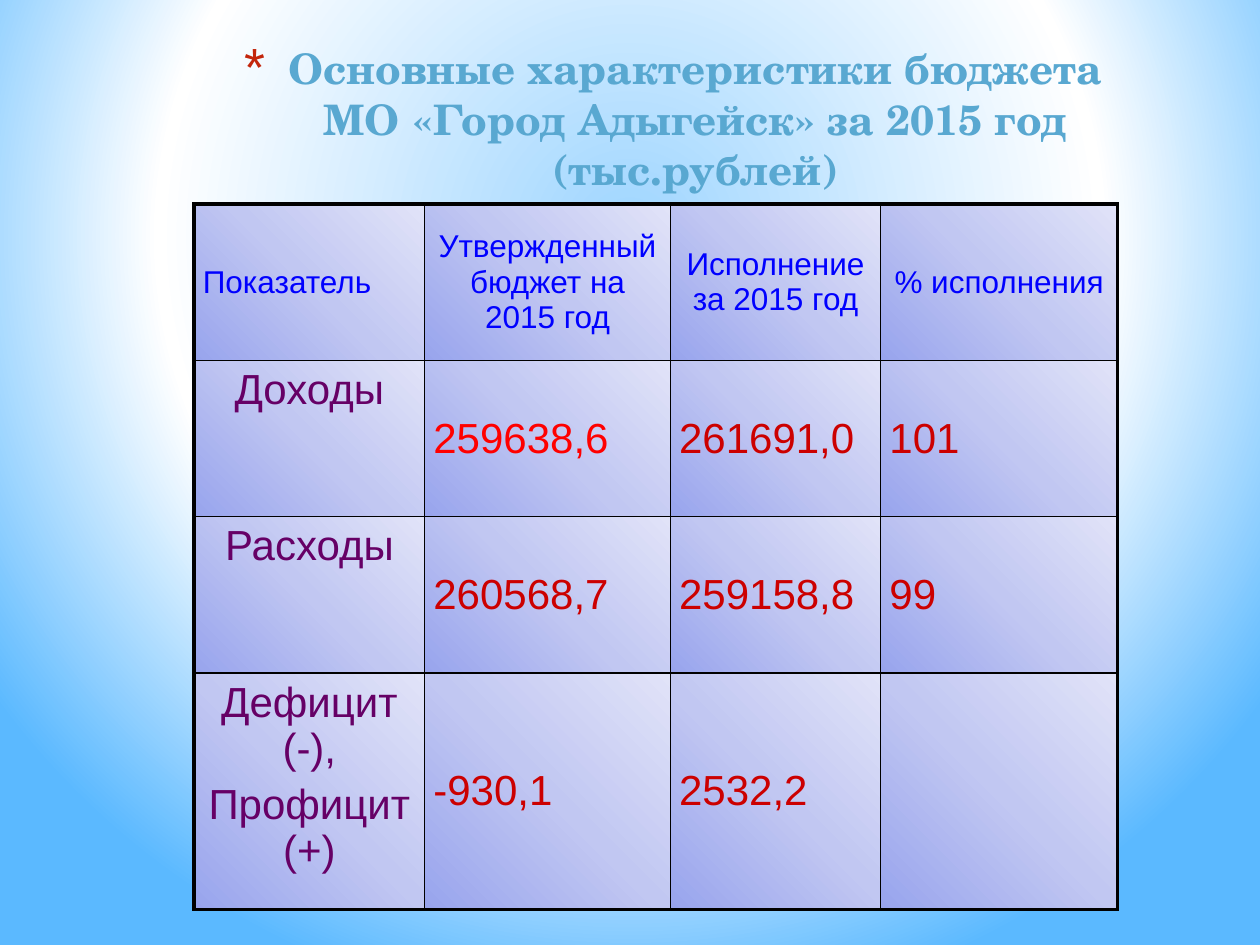
from lxml import etree
from pptx import Presentation
from pptx.dml.color import RGBColor
from pptx.enum.text import MSO_ANCHOR, PP_ALIGN
from pptx.oxml.ns import qn
from pptx.util import Inches, Pt

COLORS = {
    "title": "59A8D1", "bullet": "C3260C", "border": "000000",
    "header": "0000FF", "label": "660066", "value": "CC0000", "alert": "FF0000",
}
BACKGROUND_STOPS = [(0, "9ED5FF"), (60, "FFFFFF"), (100, "5BB9FF")]
CELL_STOPS = [(0, "98A4ED"), (50, "C1C7F2"), (100, "E1E3F8")]

COL_WIDTHS = [1.83, 1.95, 1.67, 1.88]
ROW_HEIGHTS = [1.24, 1.24, 1.24, 1.88]
ROWS = [
    ["Показатель", "Утвержденный бюджет на 2015 год", "Исполнение за 2015 год", "% исполнения"],
    ["Доходы", "259638,6", "261691,0", "101"],
    ["Расходы", "260568,7", "259158,8", "99"],
    ["Дефицит (-),\nПрофицит (+)", "-930,1", "2532,2", ""],
]


def add_element(parent, tag, **attrs):
    return etree.SubElement(parent, qn(tag), {k: str(v) for k, v in attrs.items()})


def add_gradient(parent, stops):
    grad = add_element(parent, "a:gradFill", rotWithShape=1)
    stop_list = add_element(grad, "a:gsLst")
    for pos, color in stops:
        stop = add_element(stop_list, "a:gs", pos=pos * 1000)
        add_element(stop, "a:srgbClr", val=color)
    return grad


def format_runs(p, size, color, font, bold=False):
    for r in p.runs:
        r.font.size = Pt(size)
        r.font.name = font
        r.font.bold = bold
        r.font.color.rgb = RGBColor.from_string(COLORS[color])


def set_background(slide):
    c_sld = slide.element.find(qn("p:cSld"))
    bg = add_element(c_sld, "p:bg")
    c_sld.insert(0, bg)
    bg_pr = add_element(bg, "p:bgPr")
    grad = add_gradient(bg_pr, BACKGROUND_STOPS)
    circle = add_element(grad, "a:path", path="circle")
    add_element(circle, "a:fillToRect", l=20000, t=10000, r=20000, b=60000)
    add_element(bg_pr, "a:effectLst")


def add_title(slide, left, top, width, height):
    tf = slide.shapes.add_textbox(left, top, width, height).text_frame
    tf.word_wrap = True
    p = tf.paragraphs[0]
    p.text = "Основные характеристики бюджета МО «Город Адыгейск» за 2015 год (тыс.рублей)"
    p.alignment = PP_ALIGN.CENTER
    format_runs(p, 24, "title", "TeX Gyre Schola", bold=True)

    p_pr = p._p.get_or_add_pPr()
    p_pr.set("marL", str(Inches(0.35)))
    p_pr.set("indent", str(Inches(-0.35)))
    add_element(add_element(p_pr, "a:buClr"), "a:srgbClr", val=COLORS["bullet"])
    add_element(p_pr, "a:buSzPct", val=128000)
    add_element(p_pr, "a:buFont", typeface="Arial")
    add_element(p_pr, "a:buChar", char="*")


def style_cell(cell, outer_sides):
    """Give the cell its gradient and borders, thick on the table's outer sides."""
    cell.margin_left = cell.margin_right = Inches(0.07)
    cell.margin_top = cell.margin_bottom = Inches(0.05)
    tc_pr = cell._tc.get_or_add_tcPr()
    for side in "LRTB":
        weight = 2.25 if side in outer_sides else 1
        ln = add_element(tc_pr, f"a:ln{side}", w=Pt(weight))
        add_element(add_element(ln, "a:solidFill"), "a:srgbClr", val=COLORS["border"])
    grad = add_gradient(tc_pr, CELL_STOPS)
    add_element(grad, "a:lin", ang=315 * 60000, scaled=1)


def fill_cell(cell, text, row, col):
    is_header, is_label = row == 0, col == 0
    size = 18 if is_header else 24
    if is_header:
        color = "header"
    elif is_label:
        color = "label"
    else:
        color = "alert" if (row, col) == (1, 1) else "value"

    cell.text = text
    cell.vertical_anchor = MSO_ANCHOR.TOP if is_label and not is_header else MSO_ANCHOR.MIDDLE
    for p in cell.text_frame.paragraphs:
        p.alignment = PP_ALIGN.CENTER if is_header != is_label else PP_ALIGN.LEFT
        p.space_before = Pt(size * 0.2)
        format_runs(p, size, color, "Arial")


def add_budget_table(slide, left, top, width, height):
    n_rows, n_cols = len(ROWS), len(COL_WIDTHS)
    table = slide.shapes.add_table(n_rows, n_cols, left, top, width, height).table
    table.first_row = table.horz_banding = False
    for column, col_width in zip(table.columns, COL_WIDTHS):
        column.width = Inches(col_width)
    for table_row, row_height in zip(table.rows, ROW_HEIGHTS):
        table_row.height = Inches(row_height)

    for row, texts in enumerate(ROWS):
        for col, text in enumerate(texts):
            edges = {"L": col == 0, "R": col == n_cols - 1,
                     "T": row == 0, "B": row == n_rows - 1}
            cell = table.cell(row, col)
            style_cell(cell, [side for side, outer in edges.items() if outer])
            fill_cell(cell, text, row, col)


def main():
    prs = Presentation()
    prs.slide_width, prs.slide_height = Inches(10), Inches(7.5)
    slide = prs.slides.add_slide(prs.slide_layouts[6])
    set_background(slide)
    add_title(slide, Inches(1.61), Inches(0.29), Inches(7.47), Inches(1.1))
    add_budget_table(slide, Inches(1.54), Inches(1.62), Inches(7.32), Inches(5.59))
    prs.save("out.pptx")


if __name__ == "__main__":
    main()
